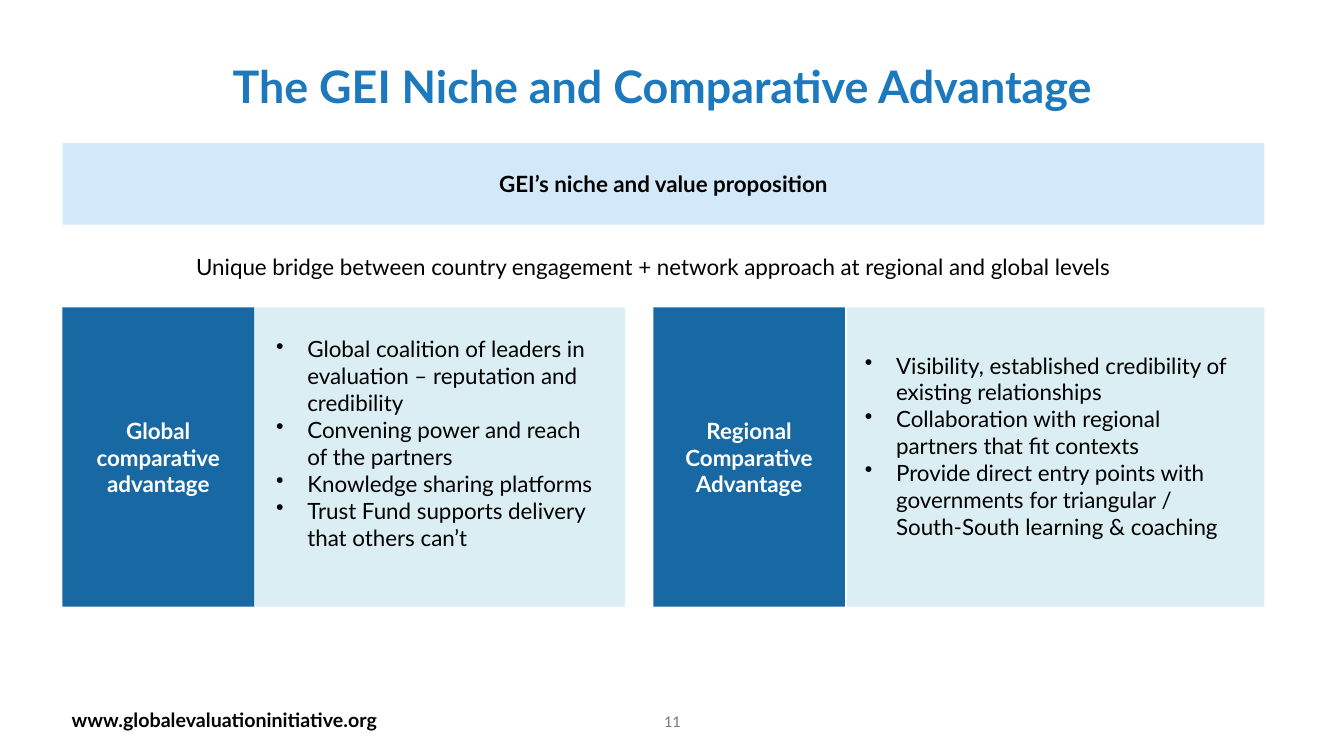
import pptx
import pptx.util
import pptx.dml.color
import pptx.enum.shapes
import pptx.enum.text
import pptx.oxml.ns
import lxml.etree

Inches = pptx.util.Inches
ALIGN = pptx.enum.text.PP_ALIGN
ANCHOR = pptx.enum.text.MSO_ANCHOR
COLORS = {"title": "1C79BE", "band": "D3E9F9", "label": "1868A4", "panel": "DBEEF4",
          "text": "000000", "light": "FFFFFF", "number": "797979"}
LEFT = 0.62
LABEL = 1.9
TOP, HIGH = 3.05, 2.97

GLOBAL = ["Global coalition of leaders in evaluation – reputation and credibility",
          "Convening power and reach of the partners",
          "Knowledge sharing platforms",
          "Trust Fund supports delivery that others can’t"]
REGION = ["Visibility, established credibility of existing relationships",
          "Collaboration with regional partners that fit contexts",
          "Provide direct entry points with governments for triangular / "
          "South‑South learning & coaching"]


def rgb(name):
    """Return the named colour."""
    return pptx.dml.color.RGBColor.from_string(COLORS[name])


def bullet(para):
    """Give a paragraph a hanging bullet."""
    props = para._p.get_or_add_pPr()
    props.set("marL", str(Inches(0.31)))
    props.set("indent", str(-Inches(0.31)))
    mark = lxml.etree.SubElement(props, pptx.oxml.ns.qn("a:buChar"))
    mark.set("char", "•")


def write(shape, lines, size=16, color="text", bold=False, align=ALIGN.CENTER,
          anchor=ANCHOR.MIDDLE, marks=False):
    """Fill a shape with formatted paragraphs."""
    frame = shape.text_frame
    frame.text = "\n".join(lines)
    frame.word_wrap = True
    frame.vertical_anchor = anchor
    for para in frame.paragraphs:
        para.alignment = align
        if marks:
            bullet(para)
        for run in para.runs:
            font = run.font
            font.name, font.size, font.bold = "Lato", pptx.util.Pt(size), bold
            font.color.rgb = rgb(color)
    return frame


def text(slide, box, lines, **style):
    """Add a text box."""
    return write(slide.shapes.add_textbox(*map(Inches, box)), lines, **style)


def block(slide, box, fill):
    """Add a plain filled rectangle."""
    shape = slide.shapes.add_shape(pptx.enum.shapes.MSO_SHAPE.RECTANGLE, *map(Inches, box))
    shape.shadow.inherit = False
    shape.fill.solid()
    shape.fill.fore_color.rgb = rgb(fill)
    shape.line.fill.background()
    return shape


def header(slide, x, y, w):
    """Place the title, the band and the summary line."""
    frame = text(slide, (x + 0.09, y, w - 0.1, 0.81),
                 ["The GEI Niche and Comparative Advantage"],
                 size=32, color="title", bold=True)
    frame.margin_left = 0
    band = block(slide, (x, y + 0.98, w, 0.81), "band")
    write(band, ["GEI’s niche and value proposition"], bold=True)
    text(slide, (x, y + 2.02, w - 0.2, 0.37),
         ["Unique bridge between country engagement + network approach "
          "at regional and global levels"], anchor=ANCHOR.TOP)


def card(slide, x, y, w, h, name, items, gap, inset):
    """Place a label beside a panel of bullets, with inset as list left, top, width."""
    px = x + LABEL + gap
    block(slide, (px, y, w - LABEL - gap, h), "panel")
    write(block(slide, (x, y, LABEL, h), "label"), [name], color="light", bold=True)
    dx, dy, wide = inset
    text(slide, (px + dx, y + dy, wide, h - 2 * dy), items,
         align=ALIGN.LEFT, anchor=ANCHOR.TOP, marks=True)


def footer(slide, x, y):
    """Place the web address and the slide number."""
    frame = text(slide, (x, y + 0.1, 3.79, 0.2), ["www.globalevaluationinitiative.org"],
                 size=14, bold=True, align=ALIGN.LEFT, anchor=ANCHOR.TOP)
    frame.margin_left = frame.margin_right = frame.margin_top = frame.margin_bottom = 0
    frame.paragraphs[0].line_spacing = pptx.util.Pt(13.9)
    text(slide, (5.17, y, 3, 0.4), ["11"], size=10.5, color="number")


def main():
    """Build and save the slide."""
    deck = pptx.Presentation()
    deck.slide_width, deck.slide_height = Inches(13.33), Inches(7.5)
    slide = deck.slides.add_slide(deck.slide_layouts[6])
    header(slide, LEFT, 0.44, 11.92)
    card(slide, LEFT, TOP, 5.58, HIGH, "Global comparative advantage", GLOBAL,
         0, (0.12, 0.23, 3.46))
    card(slide, 6.48, TOP, 6.06, HIGH, "Regional Comparative Advantage", REGION,
         0.02, (0.08, 0.39, 3.96))
    footer(slide, 0.71, 6.96)
    deck.save("out.pptx")


if __name__ == "__main__":
    main()
